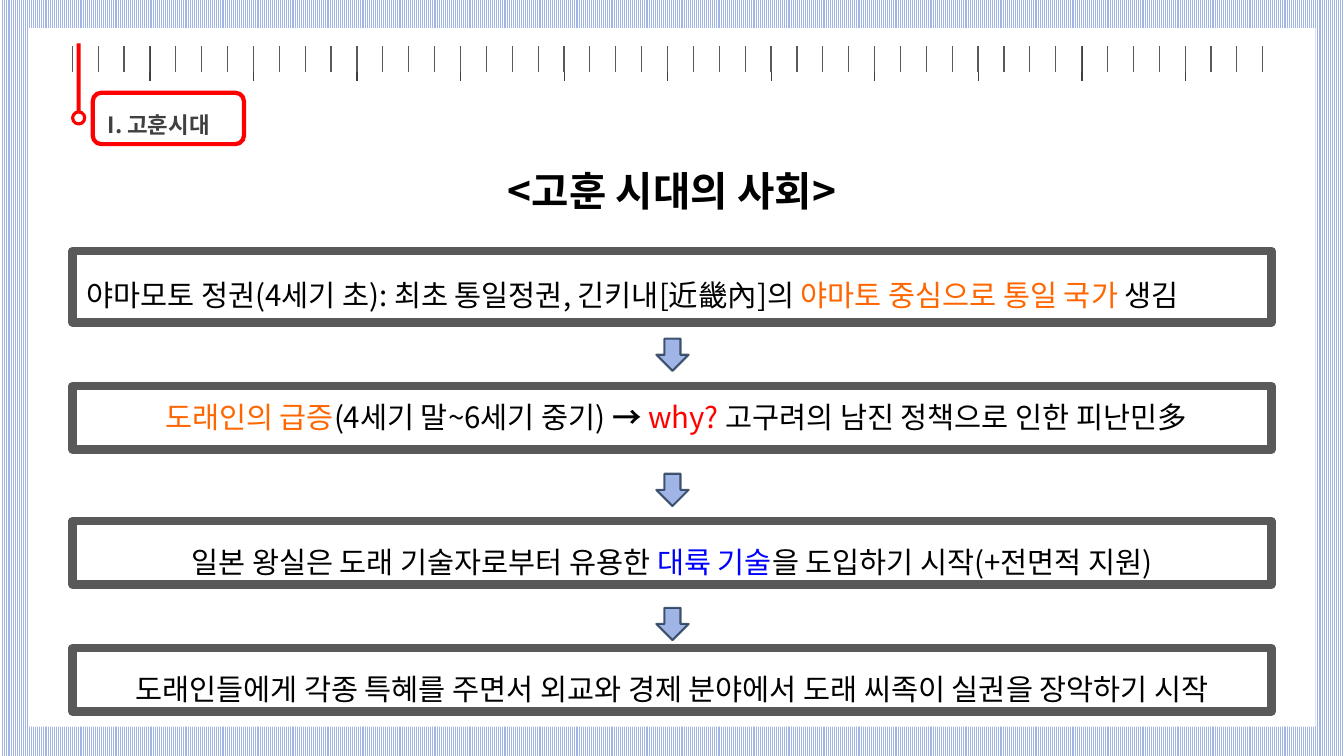
from lxml import etree
from pptx import Presentation
from pptx.dml.color import RGBColor
from pptx.enum import dml, shapes, text
from pptx.oxml.ns import qn
from pptx.util import Inches, Pt

# Content
FONT = "Noto Sans CJK KR"
COLORS = {"stripe": "A0B4E6", "white": "FFFFFF", "black": "000000",
          "dark": "404040", "gray": "595959", "orange": "FF6600",
          "red": "FF0000", "blue": "0000FF", "navy": "182F4B"}
LABEL = " I. 고훈시대"
TITLE = "<고훈 시대의 사회>"
# Runs: text, colour, bold
STEPS = [
    {"box": (2.49, 0.71), "text": (0.76, 2.49, 0.66), "centered": False, "spacing": 1.6,
     "runs": [("야마모토 정권(4세기 초): 최초 통일정권, 긴키내[近畿內]의 ", "black", False),
              ("야마토 중심으로 통일 국가", "orange", False),
              (" 생김", "black", False)]},
    {"box": (3.83, 0.63), "text": (0.76, 3.91, 0.45), "centered": True, "spacing": None,
     "runs": [("도래인의 급증", "orange", False),
              ("(4세기 말~6세기 중기) ", "black", False),
              ("→ ", "black", True),
              ("why? ", "red", False),
              ("고구려의 남진 정책으로 인한 피난민多", "black", False)]},
    {"box": (5.17, 0.63), "text": (0.72, 5.14, 0.66), "centered": True, "spacing": 1.6,
     "runs": [("일본 왕실은 도래 기술자로부터 유용한 ", "black", False),
              ("대륙 기술", "blue", False),
              ("을 도입하기 시작(+전면적 지원)", "black", False)]},
    {"box": (6.43, 0.63), "text": (0.72, 6.4, 0.66), "centered": True, "spacing": 1.6,
     "runs": [("도래인들에게 각종 특혜를 주면서 외교와 경제 분야에서 "
               "도래 씨족이 실권을 장악하기 시작", "black", False)]},
]
STEP_LEFT, STEP_WIDTH = 0.72, 11.89
ARROW_TOPS = [3.36, 4.7, 6.03]
RULER_LEFT, RULER_TOP, RULER_WIDTH = 0.46, 0.46, 12.33
RULERS = [(12, 0.34, "dark"), (48, 0.25, "gray")]  # columns, tick length, colour


def rgb(name):
    return RGBColor.from_string(COLORS[name])


def add_box(parent, kind, left, top, width, height, fill=None, line=None, weight=1):
    sp = parent.shapes.add_shape(kind, Inches(left), Inches(top), Inches(width), Inches(height))
    sp.shadow.inherit = False
    if fill:
        sp.fill.solid()
        sp.fill.fore_color.rgb = rgb(fill)
    else:
        sp.fill.background()
    if line:
        sp.line.color.rgb = rgb(line)
        sp.line.width = Pt(weight)
    else:
        sp.line.fill.background()
    return sp


def add_text(s, left, top, width, height, runs, size, centered=True, spacing=None, grow=True):
    tb = s.shapes.add_textbox(Inches(left), Inches(top), Inches(width), Inches(height))
    tf = tb.text_frame
    tf.word_wrap = True
    tf.auto_size = text.MSO_AUTO_SIZE.SHAPE_TO_FIT_TEXT if grow else text.MSO_AUTO_SIZE.NONE
    p = tf.paragraphs[0]
    p.alignment = text.PP_ALIGN.CENTER if centered else text.PP_ALIGN.LEFT
    if spacing:
        p.line_spacing = spacing
    for words, color, bold in runs:
        r = p.add_run()
        r.text = words
        r.font.size = Pt(size)
        r.font.bold = bold
        r.font.color.rgb = rgb(color)
        r.font.name = FONT
        etree.SubElement(r.font._element, qn("a:ea"), typeface=FONT)


def set_border(cell, side, color=None):
    ln = etree.SubElement(cell._tc.get_or_add_tcPr(), qn("a:ln" + side), w=str(Pt(1)))
    if color:
        fill = etree.SubElement(ln, qn("a:solidFill"))
        etree.SubElement(fill, qn("a:srgbClr"), val=COLORS[color])
    else:
        etree.SubElement(ln, qn("a:noFill"))


def add_ruler(s, columns, length, color):
    table = s.shapes.add_table(1, columns, Inches(RULER_LEFT), Inches(RULER_TOP),
                               Inches(RULER_WIDTH), Inches(length)).table
    table.first_row = table.horz_banding = False
    for i in range(columns):
        table.columns[i].width = Inches(RULER_WIDTH / columns)
        cell = table.cell(0, i)
        cell.margin_left = cell.margin_right = cell.margin_top = cell.margin_bottom = 0
        set_border(cell, "L", color if i > 0 else None)
        set_border(cell, "R", color if i < columns - 1 else None)
        set_border(cell, "T")
        set_border(cell, "B")
        cell.fill.background()
        etree.SubElement(cell.text_frame.paragraphs[0]._p, qn("a:endParaRPr"), sz="400")


def main():
    prs = Presentation()
    prs.slide_width, prs.slide_height = Inches(13.33), Inches(7.5)
    s = prs.slides.add_slide(prs.slide_layouts[6])
    kinds = shapes.MSO_SHAPE

    # Striped background and white page
    bg = s.background.fill
    bg.patterned()
    bg.pattern = dml.MSO_PATTERN.NARROW_VERTICAL
    bg.fore_color.rgb = rgb("stripe")
    bg.back_color.rgb = rgb("white")
    add_box(s, kinds.RECTANGLE, 0.28, 0.28, 12.77, 6.93, fill="white")

    # Ruler ticks
    for ruler in RULERS:
        add_ruler(s, *ruler)

    # Steps
    for step in STEPS:
        top, height = step["box"]
        add_box(s, kinds.RECTANGLE, STEP_LEFT, top, STEP_WIDTH, height, line="gray", weight=6)
    for step in STEPS:
        left, top, height = step["text"]
        add_text(s, left, top, STEP_WIDTH, height, step["runs"], 21,
                 step["centered"], step["spacing"])

    # Arrows between steps
    for top in ARROW_TOPS:
        arrow = add_box(s, kinds.DOWN_ARROW, 6.51, top, 0.32, 0.32, "stripe", "navy", 1.5)
        clr = arrow.line._ln.find(".//" + qn("a:srgbClr"))
        etree.SubElement(clr, qn("a:alpha"), val="78000")

    # Title
    add_text(s, 3.08, 1.6, 7.17, 0.58, [(TITLE, "black", True)], 29)

    # Red marker and section label
    marker = s.shapes.add_group_shape()
    add_box(marker, kinds.RECTANGLE, 0.76, 0.43, 0.04, 0.71, fill="red")
    add_box(marker, kinds.OVAL, 0.72, 1.11, 0.12, 0.12, "white", "red", 2.25)
    add_text(s, 0.92, 0.92, 1.5, 0.51, [(LABEL, "dark", True)], 16,
             centered=False, spacing=1.5, grow=False)
    add_box(s, kinds.ROUNDED_RECTANGLE, 0.92, 0.92, 1.5, 0.51, line="red", weight=3)

    prs.save("out.pptx")


if __name__ == "__main__":
    main()
